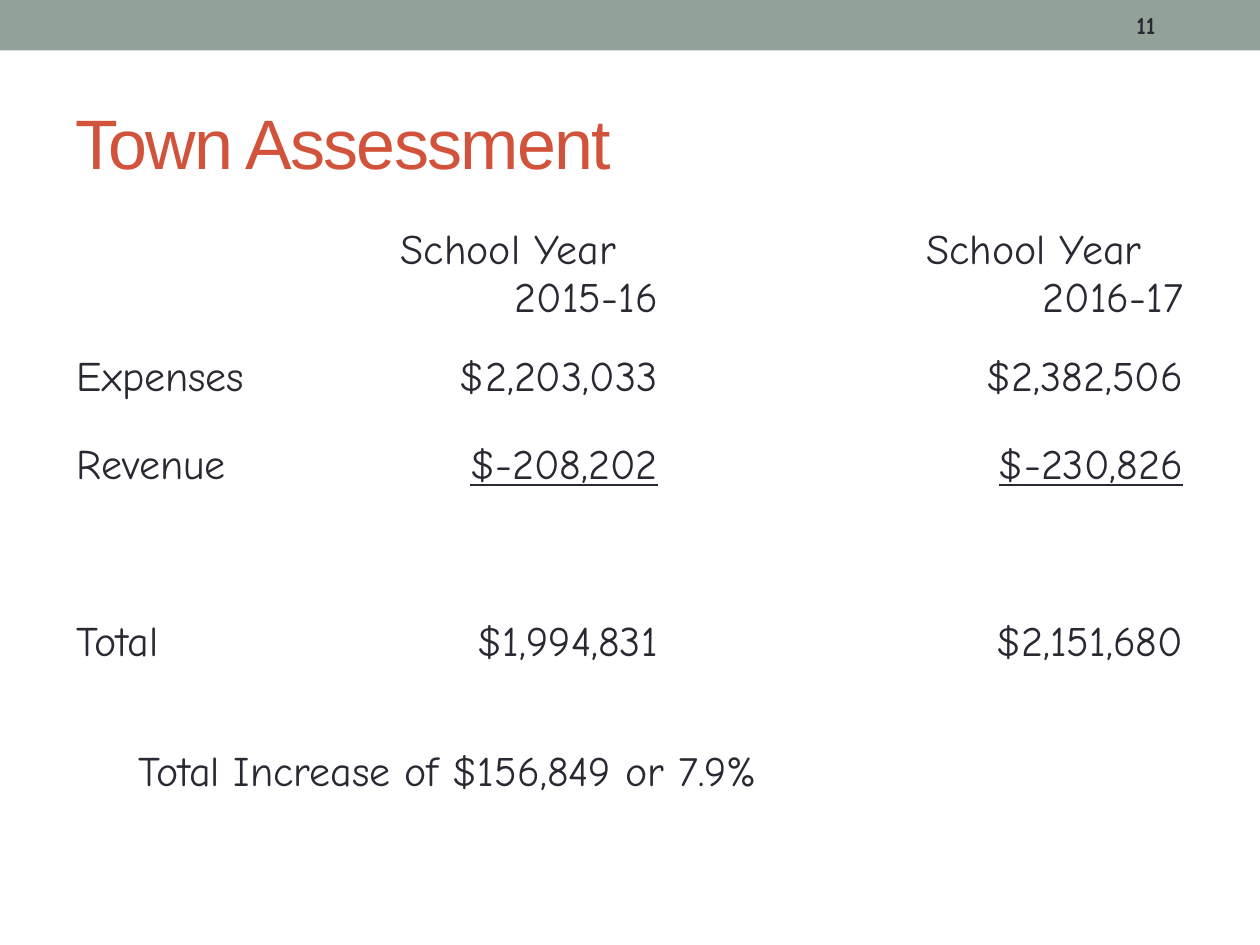
from collections import namedtuple

from pptx import Presentation
from pptx.dml.color import RGBColor
from pptx.enum.shapes import MSO_SHAPE
from pptx.enum.text import MSO_ANCHOR, PP_ALIGN
from pptx.util import Inches, Pt

SAGE = RGBColor(0x93, 0xA2, 0x99)
BRICK = RGBColor(0xD2, 0x53, 0x3C)
INK = RGBColor(0x29, 0x29, 0x34)

WIDTH, HEIGHT = Inches(10), Inches(7.5)
COLUMN_SHARES = [0.18, 0.028, 0.275, 0.057, 0.038, 0.322]
HEADER_ROW, BODY_ROW = 0.89 / 7.5, 0.7 / 7.5
CELL_INSET = 0.011
HEADING_SPACE = 0.204
LABEL_COLUMN = 0
YEARS = [(1, 2, "2015-16"), (4, 5, "2016-17")]
AMOUNTS = {
    1: ("Expenses", "$2,203,033", "$2,382,506"),
    2: ("Revenue", "$-208,202", "$-230,826"),
    4: ("Total", "$1,994,831", "$2,151,680"),
}

Box = namedtuple("Box", "left top width height")


def share_box(left, top, width, height):
    return Box(int(WIDTH * left), int(HEIGHT * top),
               int(WIDTH * width), int(HEIGHT * height))


def write(para, text, font="Comic Neue", size=24, color=INK, bold=False,
          underline=False, align=PP_ALIGN.LEFT, spacing=None, indent=0):
    para.alignment = align
    if indent:
        para._p.get_or_add_pPr().set("marL", str(int(WIDTH * indent)))
    span = para.add_run()
    span.text = text
    span.font.name = font
    span.font.size = Pt(size)
    span.font.color.rgb = color
    span.font.bold = bold
    span.font.underline = underline
    if spacing is not None:
        span.font._element.set("spc", str(int(spacing * 100)))


def add_text(page, box, text, anchor=MSO_ANCHOR.MIDDLE, **style):
    frame = page.shapes.add_textbox(*box).text_frame
    frame.word_wrap = True
    frame.vertical_anchor = anchor
    write(frame.paragraphs[0], text, **style)


def add_banner(page, box, number):
    banner = page.shapes.add_shape(MSO_SHAPE.RECTANGLE, *box)
    banner.shadow.inherit = False
    banner.fill.solid()
    banner.fill.fore_color.rgb = SAGE
    banner.line.fill.background()
    number_box = Box(box.left + int(box.width * 0.892), box.top + int(box.height * 0.05),
                     int(box.width * 0.058), int(box.height * 0.9))
    add_text(page, number_box, number, size=14, bold=True)


def add_year_heading(table, first, last, year):
    cell = table.cell(0, first)
    cell.merge(table.cell(0, last))
    indent = sum(COLUMN_SHARES[first:last + 1]) - 2 * CELL_INSET - HEADING_SPACE
    write(cell.text_frame.paragraphs[0], "School Year", indent=indent)
    write(cell.text_frame.add_paragraph(), year, align=PP_ALIGN.RIGHT)


def add_assessment_table(page, box):
    table = page.shapes.add_table(5, len(COLUMN_SHARES), *box).table
    table.first_row = table.horz_banding = False
    for column, share in zip(table.columns, COLUMN_SHARES):
        column.width = int(WIDTH * share)
    for index, row in enumerate(table.rows):
        row.height = int(HEIGHT * (BODY_ROW if index else HEADER_ROW))
        for cell in row.cells:
            cell.fill.background()
            cell.margin_left = cell.margin_right = int(WIDTH * CELL_INSET)
            cell.vertical_anchor = MSO_ANCHOR.MIDDLE if index else MSO_ANCHOR.TOP
    for first, last, year in YEARS:
        add_year_heading(table, first, last, year)
    for index, (label, *amounts) in AMOUNTS.items():
        write(table.cell(index, LABEL_COLUMN).text_frame.paragraphs[0], label)
        for (_, column, _), amount in zip(YEARS, amounts):
            write(table.cell(index, column).text_frame.paragraphs[0], amount,
                  align=PP_ALIGN.RIGHT, underline=label == "Revenue")


def build_assessment_slide(deck):
    page = deck.slides.add_slide(deck.slide_layouts[6])
    add_banner(page, share_box(0, 0, 1, 0.4 / 7.5), "11")
    add_text(page, share_box(0.05, 0.58 / 7.5, 0.9, 1.08 / 7.5), "Town Assessment",
             font="Arial", size=40, color=BRICK, spacing=-1)
    add_assessment_table(page, share_box(0.05, 1.75 / 7.5, 0.9, HEADER_ROW + 4 * BODY_ROW))
    add_text(page, share_box(0.1, 5.86 / 7.5, 0.683, 0.5 / 7.5),
             "Total Increase of $156,849 or 7.9%", anchor=MSO_ANCHOR.TOP)


def main():
    deck = Presentation()
    deck.slide_width, deck.slide_height = WIDTH, HEIGHT
    build_assessment_slide(deck)
    deck.save("out.pptx")


if __name__ == "__main__":
    main()
